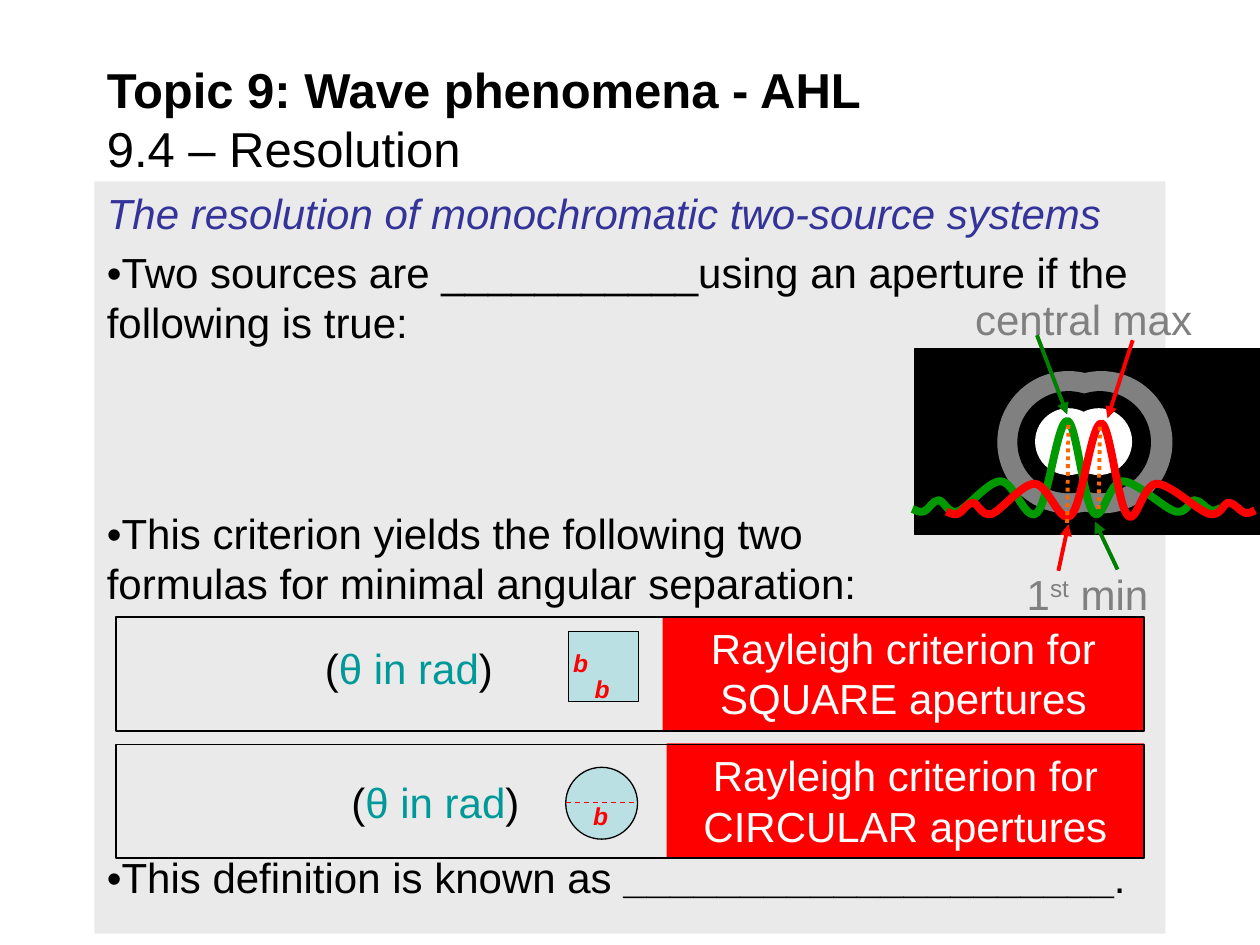
from dataclasses import dataclass

from pptx import Presentation
from pptx.dml.color import RGBColor
from pptx.enum.dml import MSO_LINE
from pptx.enum.shapes import MSO_CONNECTOR, MSO_SHAPE
from pptx.enum.text import MSO_ANCHOR, PP_ALIGN
from pptx.oxml.ns import qn
from pptx.util import Inches, Pt
from lxml.etree import SubElement


@dataclass(frozen=True)
class Theme:
    font: str = "Arial"
    black: str = "000000"
    white: str = "FFFFFF"
    gray: str = "808080"
    panel: str = "EAEAEA"
    heading: str = "333399"
    red: str = "FF0000"
    green: str = "008000"
    wave_green: str = "009900"
    orange: str = "FF6600"
    teal: str = "009999"
    aperture: str = "BBE0E3"
    title_size: float = 28
    body_size: float = 24
    small_size: float = 14


THEME = Theme()
COLUMNS, ROWS = 100, 75
WIDTH, HEIGHT = Inches(10), Inches(7.5)


class SlideBuilder:
    """Draws on one slide; all lengths are columns and rows of the grid."""

    def __init__(self, slide, theme):
        self.slide, self.theme = slide, theme
        self.shapes = slide.shapes

    def open_group(self):
        self.shapes = self.slide.shapes.add_group_shape().shapes

    def close_group(self):
        self.shapes = self.slide.shapes

    def place(self, *lengths):
        units = (WIDTH / COLUMNS, HEIGHT / ROWS)
        return [round(length * units[i % 2]) for i, length in enumerate(lengths)]

    def outline(self, line, color, width, dash=None):
        line.color.rgb = RGBColor.from_string(color)
        line.width = Pt(width)
        if dash:
            line.dash_style = dash

    def shape(self, kind, area, fill=None, line=None, width=0.75):
        box = self.shapes.add_shape(kind, *self.place(*area))
        box.shadow.inherit = False
        if fill:
            box.fill.solid()
            box.fill.fore_color.rgb = RGBColor.from_string(fill)
        else:
            box.fill.background()
        if line:
            self.outline(box.line, line, width)
        else:
            box.line.fill.background()
        return box

    def rectangle(self, *area, **style):
        return self.shape(MSO_SHAPE.RECTANGLE, area, **style)

    def circle(self, left, top, size, fill, line=None):
        return self.shape(MSO_SHAPE.OVAL, (left, top, size, size), fill, line or fill)

    def text(self, *area, anchor=MSO_ANCHOR.TOP, wrap=True):
        box = self.shapes.add_textbox(*self.place(*area))
        return self.frame(box, anchor, wrap)

    def frame(self, box, anchor=MSO_ANCHOR.TOP, wrap=True):
        box.text_frame.word_wrap = wrap
        box.text_frame.vertical_anchor = anchor
        return box.text_frame

    def paragraph(self, frame, before=0, align=PP_ALIGN.LEFT):
        first = frame.paragraphs[0]
        para = frame.add_paragraph() if first.runs else first
        para.space_before, para.alignment = Pt(before), align
        return para

    def span(self, para, words, color=None, size=None, bold=False, italic=False):
        span = para.add_run()
        span.text = words
        font = span.font
        font.name, font.bold, font.italic = self.theme.font, bold, italic
        font.size = Pt(size or self.theme.body_size)
        font.color.rgb = RGBColor.from_string(color or self.theme.black)
        return span

    def line(self, start, end, color, width=2.25, dash=None, arrow=False):
        line = self.shapes.add_connector(
            MSO_CONNECTOR.STRAIGHT, *self.place(*start, *end))
        self.outline(line.line, color, width, dash)
        if arrow:
            SubElement(line.line._get_or_add_ln(), qn("a:tailEnd"), type="triangle")
        SubElement(line._element.spPr, qn("a:effectLst"))

    def curve(self, points, color, width):
        """Draws a chain of cubic Bézier segments, three points to each."""
        start, *rest = [self.place(*point) for point in points]
        builder = self.shapes.build_freeform(*start)
        builder.add_line_segments(rest, close=False)
        wave = builder.convert_to_shape()
        segments = list(wave._element.iter(qn("a:lnTo")))
        for first, second, last in zip(*[iter(segments)] * 3):
            bezier = SubElement(first.getparent(), qn("a:cubicBezTo"))
            for segment in (first, second, last):
                bezier.append(segment[0])
                segment.getparent().remove(segment)
        wave.shadow.inherit = False
        wave.fill.background()
        self.outline(wave.line, color, width)

    def aperture_label(self, left, top):
        para = self.paragraph(self.text(left, top, 3.2, 3.3, wrap=False))
        self.span(para, "b", self.theme.red, self.theme.small_size, True, True)

    def criterion(self, top, split, theta_left, theta_top, words):
        """A framed row: angle note at the left, red caption at the right."""
        caption = self.rectangle(split, top, 90.8 - split, 9.1, fill=self.theme.red)
        para = self.paragraph(self.frame(caption), align=PP_ALIGN.CENTER)
        self.span(para, words, self.theme.white)
        self.rectangle(9.2, top + 0.1, 81.6, 9, line=self.theme.black, width=1)
        para = self.paragraph(self.text(theta_left, theta_top, 15.9, 5.1))
        self.span(para, "(")
        self.span(para, "θ in rad", self.theme.teal)
        self.span(para, ")")


# Diffraction pattern: start point, then two controls and an end per segment
WAVE = [(72.4, 40.4), (72.7, 40.5), (73, 40.7), (73.3, 40.6),
        (73.7, 40.5), (74, 39.7), (74.5, 39.7), (74.9, 39.7), (75.2, 40.8), (76, 40.6),
        (76.8, 40.3), (78.4, 38.2), (79.4, 38.2), (80.5, 38.2), (81.4, 41.5), (82.3, 40.7),
        (83.2, 39.9), (83.9, 33.4), (84.7, 33.4), (85.4, 33.4), (86, 39.9), (86.8, 40.7),
        (87.5, 41.5), (88, 38.2), (89.1, 38.2), (90.2, 38.2), (92.3, 40.3), (93.3, 40.6),
        (94.2, 40.8), (94.4, 39.7), (94.8, 39.7), (95.3, 39.7), (95.7, 40.4), (96.1, 40.5),
        (96.4, 40.6), (96.7, 40.4), (96.9, 40.3)]


def main():
    deck = Presentation()
    deck.slide_width, deck.slide_height = WIDTH, HEIGHT
    page = SlideBuilder(deck.slides.add_slide(deck.slide_layouts[6]), THEME)

    # Body panel; wide spacing leaves room for answers and formulas
    panel = page.rectangle(7.5, 14.4, 85, 59.7, fill=THEME.panel)
    frame = page.frame(panel)
    page.span(page.paragraph(frame, 4.8),
              "The resolution of monochromatic two-source systems",
              THEME.heading, italic=True)
    page.span(page.paragraph(frame, 4.8),
              "•Two sources are ___________using an aperture if the following is true:")
    para = page.paragraph(frame, 91.5)
    page.span(para, "•This criterion yields the following two")
    para.add_line_break()
    page.span(para, "formulas for minimal angular separation:")
    para = page.paragraph(frame, 139)
    page.span(para, "•This definition is known as ")
    page.span(para, "_" * 21, bold=True)
    page.span(para, ".")

    # Overlapping diffraction discs
    page.open_group()
    page.rectangle(72.6, 27.7, 27.4, 14.7, fill=THEME.black, line=THEME.black)
    for size, top, lefts, color in ((11.2, 29.5, (79.2, 81.8), THEME.gray),
                                    (8, 31.1, (80.8, 83.3), THEME.black),
                                    (5.2, 32.45, (82.2, 84.6), THEME.white)):
        for left in lefts:
            page.circle(left, top, size, color)
    page.close_group()

    # Intensity curves of the two sources
    page.curve(WAVE, THEME.wave_green, 4.5)
    page.curve([(x + 2.7, y + 0.2) for x, y in WAVE], THEME.red, 4.5)

    # Labels and arrows
    page.span(page.paragraph(page.text(76.4, 22.8, 21.2, 5)), "central max", THEME.gray)
    para = page.paragraph(page.text(80.5, 44.6, 14.8, 5.1))
    page.span(para, "1", THEME.gray)
    page.span(para, "st", THEME.gray).font._element.set("baseline", "30000")
    page.span(para, " min", THEME.gray)
    for start, end, color in (((82.3, 26.6), (84.7, 32.9), THEME.green),
                              ((84, 45.3), (84.8, 41.6), THEME.red),
                              ((88.7, 45.2), (86.9, 41.4), THEME.green),
                              ((89.9, 27), (87.9, 33.2), THEME.red)):
        page.line(start, end, color, arrow=True)

    # Square aperture
    page.open_group()
    page.criterion(48.9, 52.6, 24.8, 50.5, "Rayleigh criterion for SQUARE apertures")
    page.rectangle(45.1, 50.1, 5.6, 5.6, fill=THEME.aperture, line=THEME.black)
    page.aperture_label(46.2, 53)
    page.aperture_label(44.5, 50.9)

    # Circular aperture
    page.open_group()
    page.criterion(59, 52.9, 26.9, 61.1, "Rayleigh criterion for CIRCULAR apertures")
    page.circle(44.9, 60.9, 5.7, THEME.aperture, THEME.black)
    page.line((44.9, 63.7), (50.6, 63.7), THEME.red, 0.75, MSO_LINE.DASH)
    page.aperture_label(46.1, 63.1)
    page.close_group()

    # Dotted peak markers
    for start, end in (((84.7, 41.5), (84.8, 33.5)), ((87.2, 40.4), (87.3, 33.8))):
        page.line(start, end, THEME.orange, dash=MSO_LINE.ROUND_DOT)

    # Title
    para = page.paragraph(page.text(7.5, 4.5, 85, 9.8, anchor=MSO_ANCHOR.MIDDLE))
    page.span(para, "Topic 9: Wave phenomena - AHL", size=THEME.title_size, bold=True)
    para.add_line_break()
    page.span(para, "9.4 – Resolution", size=THEME.title_size)

    deck.save("out.pptx")


if __name__ == "__main__":
    main()
